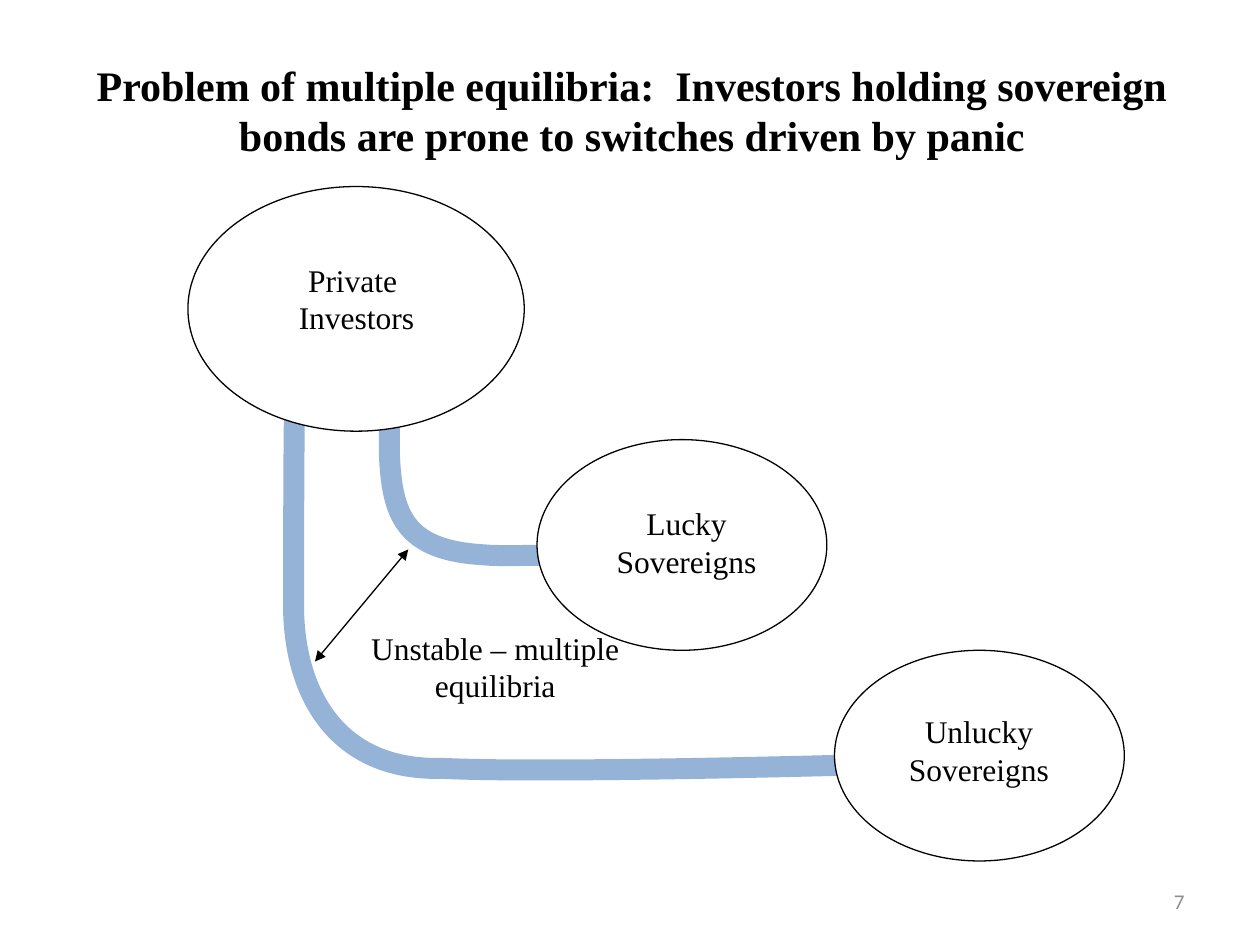
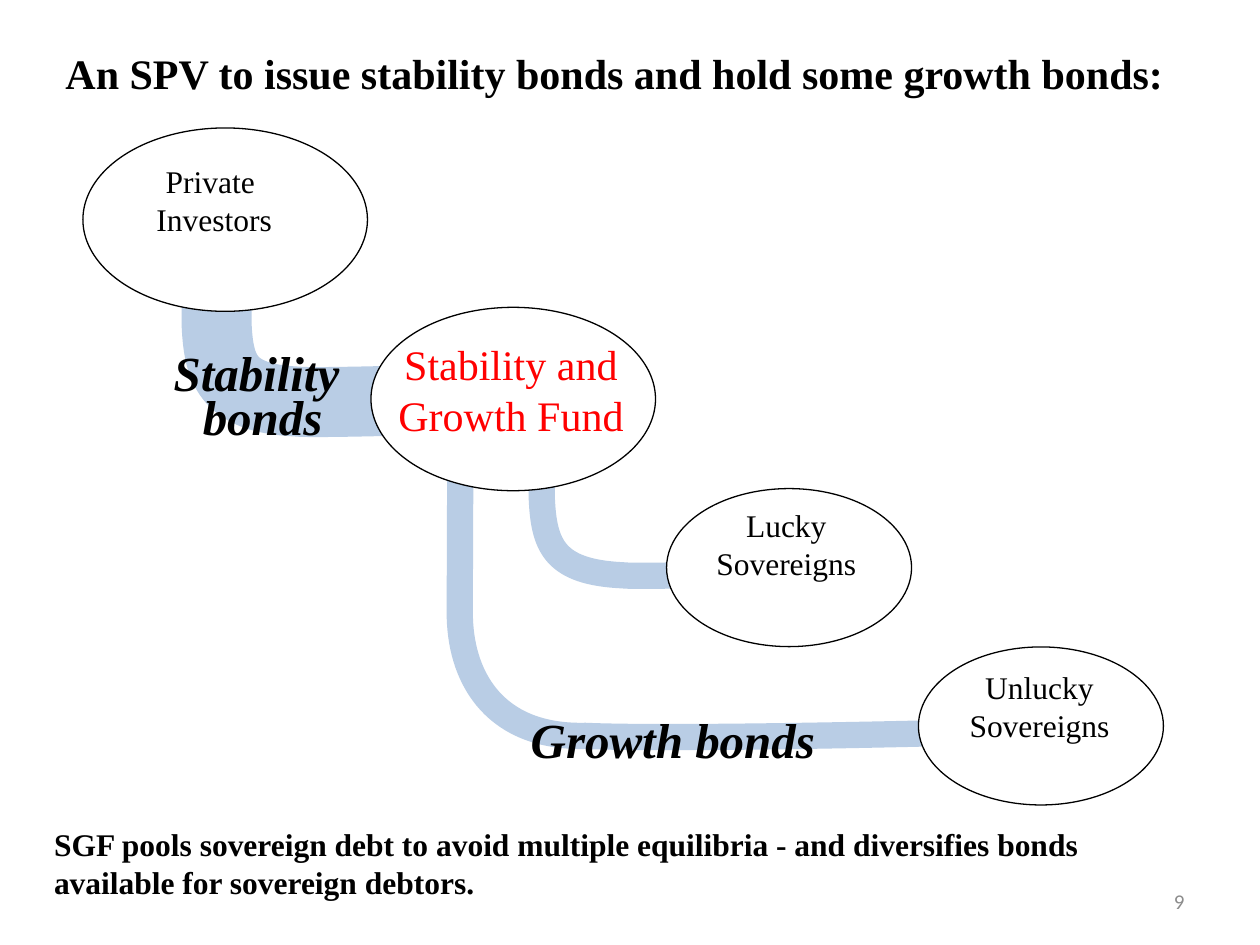
from dataclasses import dataclass
from typing import NamedTuple

from lxml import etree
from pptx import Presentation
from pptx.dml.color import RGBColor
from pptx.enum.shapes import MSO_CONNECTOR, MSO_SHAPE
from pptx.enum.text import MSO_ANCHOR, MSO_AUTO_SIZE, PP_ALIGN
from pptx.oxml.ns import qn
from pptx.slide import Slide
from pptx.text.text import TextFrame
from pptx.util import Pt

LEFT, MID, RIGHT = PP_ALIGN.LEFT, PP_ALIGN.CENTER, PP_ALIGN.RIGHT
TOP, CENTRE = MSO_ANCHOR.TOP, MSO_ANCHOR.MIDDLE
OVAL, STRAIGHT = MSO_SHAPE.OVAL, MSO_CONNECTOR.STRAIGHT
FIXED = MSO_AUTO_SIZE.NONE
TITLE_ONLY = 5


@dataclass(frozen=True)
class Theme:
    serif: str = "Times New Roman"
    sans: str = "Calibri"
    ink: RGBColor = RGBColor(0, 0, 0)
    paper: RGBColor = RGBColor(255, 255, 255)
    grey: RGBColor = RGBColor(0x8C, 0x8C, 0x8C)
    red: RGBColor = RGBColor(255, 0, 0)
    blue: RGBColor = RGBColor(0x95, 0xB3, 0xD7)
    pale: RGBColor = RGBColor(0xB9, 0xCD, 0xE5)
    small: float = 12
    text: float = 18
    head: float = 24
    bond: float = 28
    thin: float = 0.75


THEME = Theme()


class Box(NamedTuple):
    x: float
    y: float
    w: float
    h: float


class Style(NamedTuple):
    size: float = THEME.text
    color: RGBColor = THEME.ink
    bold: bool = False
    slant: bool = False
    align: PP_ALIGN = MID
    face: str = THEME.serif
    lead: float | None = None


class Label(NamedTuple):
    text: str
    box: Box
    style: Style = Style()


# Bends run down, then right: a start and three cubic curves, in percent of a box.
LONG = [(0.4, 0), (0, 0), (0, 41.4), (0, 59.2), (0.4, 79.9), (7.6, 99.4),
        (26.2, 98.7), (44.9, 100), (100, 97.8), (99.6, 97.8)]
SHORT = [(1.1, 0), (0, 0), (0, 50), (0, 50.7), (1.1, 80.5), (6.7, 97),
         (42.2, 99), (48.3, 100), (100, 98.3), (99, 98.3)]


class Flow(NamedTuple):
    bend: list[tuple[float, float]]
    box: Box
    width: float
    color: RGBColor


class Arrow(NamedTuple):
    x1: float
    y1: float
    x2: float
    y2: float


class Page(NamedTuple):
    title: Label
    number: str
    flows: list[Flow]
    ovals: list[Box]
    labels: list[Label]
    arrows: list[Arrow]


HEAD = Style(THEME.head, bold=True)
BOND = Style(THEME.bond, bold=True, slant=True)
NUMBER = Style(THEME.small, THEME.grey, align=RIGHT, face=THEME.sans)
CORNER = Box(516.25, 500.4, 167.75, 28.8)

INVESTORS = "Private \vInvestors"
LUCKY = "Lucky\vSovereigns"
UNLUCKY = "Unlucky\vSovereigns"

PAGES = [
    Page(
        Label("Problem of multiple equilibria:  Investors holding sovereign bonds "
              "are prone to switches driven by panic", Box(44, 30.2, 634.3, 65.4), HEAD),
        "7",
        [Flow(LONG, Box(167.8, 216, 324, 226), 12, THEME.blue),
         Flow(SHORT, Box(222.5, 197.3, 129.6, 121), 12, THEME.blue)],
        [Box(107.4, 106.6, 192.2, 139.8),
         Box(306.9, 251.2, 165.6, 120.4),
         Box(476.9, 371.6, 165.6, 120.4)],
        [Label(INVESTORS, Box(129.6, 145.4, 148.3, 71.3)),
         Label(LUCKY, Box(318.2, 284.4, 148.3, 57.6)),
         Label(UNLUCKY, Box(485.3, 403.2, 148.3, 74.9)),
         Label("Unstable – multiple equilibria", Box(188, 355.7, 190, 48.2))],
        [Arrow(233.3, 314, 180, 378)],
    ),
    Page(
        Label("An SPV to issue stability bonds and hold some growth bonds:",
              Box(30.2, 23.8, 671.8, 36), HEAD._replace(align=LEFT)),
        "9",
        [Flow(SHORT, Box(123.8, 139.7, 109.4, 90.7), 40, THEME.pale),
         Flow(LONG, Box(262.8, 252.7, 273.6, 170), 15, THEME.pale),
         Flow(SHORT, Box(309.6, 239, 109.4, 90.7), 15, THEME.pale)],
        [Box(47.4, 73.1, 162.6, 104.8),
         Box(212, 175.6, 162.6, 104.8),
         Box(380.9, 279.2, 140, 90.3),
         Box(524.8, 369.7, 140, 90.3)],
        [Label("Stability and Growth Fund", Box(198, 190, 187.9, 77.8),
               Style(THEME.head, THEME.red)),
         Label(LUCKY, Box(376.6, 285.8, 145.4, 77.8)),
         Label(UNLUCKY, Box(521.3, 378, 145.4, 77.8)),
         Label("Growth bonds", Box(294.5, 401.8, 180, 41.8), BOND),
         Label(INVESTORS, Box(49.7, 89.3, 145.4, 77.8)),
         Label("Stability \vbonds", Box(84.2, 200.9, 131.8, 59.8), BOND._replace(lead=25)),
         Label("SGF pools sovereign debt to avoid multiple equilibria - and diversifies "
               "bonds available for sovereign debtors.", Box(23.8, 468, 612, 51.1),
               Style(bold=True, align=LEFT))],
        [],
    ),
]


def points(box: Box) -> list[Pt]:
    return [Pt(side) for side in box]


def write(frame: TextFrame, label: Label, anchor: MSO_ANCHOR = TOP) -> None:
    frame.text = label.text
    frame.word_wrap = True
    frame.auto_size = FIXED
    frame.vertical_anchor = anchor
    style = label.style
    para = frame.paragraphs[0]
    para.alignment = style.align
    if style.lead:
        para.line_spacing = Pt(style.lead)
    font = para.font
    font.name, font.size = style.face, Pt(style.size)
    font.bold, font.italic = style.bold, style.slant
    font.color.rgb = style.color


def add_title(slide: Slide, label: Label) -> None:
    title = slide.shapes.title
    title.left, title.top, title.width, title.height = points(label.box)
    write(title.text_frame, label)


def add_label(slide: Slide, label: Label, anchor: MSO_ANCHOR = TOP) -> None:
    write(slide.shapes.add_textbox(*points(label.box)).text_frame, label, anchor)


def add_flow(slide: Slide, flow: Flow) -> None:
    """Draw a bend, turning each three line segments into one cubic curve."""
    box = flow.box
    dots = [(Pt(box.x + box.w * x / 100), Pt(box.y + box.h * y / 100))
            for x, y in flow.bend]
    pen = slide.shapes.build_freeform(*dots[0])
    pen.add_line_segments(dots[1:], close=False)
    shape = pen.convert_to_shape()
    lines = list(shape._element.iter(qn("a:lnTo")))
    trace = lines[0].getparent()
    for start in range(0, len(lines), 3):
        curve = etree.SubElement(trace, qn("a:cubicBezTo"))
        for line in lines[start:start + 3]:
            curve.append(line[0])
            trace.remove(line)
    shape.shadow.inherit = False
    shape.fill.background()
    shape.line.color.rgb = flow.color
    shape.line.width = Pt(flow.width)


def add_oval(slide: Slide, box: Box) -> None:
    oval = slide.shapes.add_shape(OVAL, *points(box))
    oval.shadow.inherit = False
    oval.fill.solid()
    oval.fill.fore_color.rgb = THEME.paper
    oval.line.color.rgb = THEME.ink
    oval.line.width = Pt(THEME.thin)


def add_arrow(slide: Slide, arrow: Arrow) -> None:
    link = slide.shapes.add_connector(STRAIGHT, *(Pt(end) for end in arrow))
    link.line.color.rgb = THEME.ink
    link.line.width = Pt(THEME.thin)
    line = link.line._get_or_add_ln()
    for tip in ("a:headEnd", "a:tailEnd"):
        etree.SubElement(line, qn(tip), type="triangle")
    etree.SubElement(link._element.spPr, qn("a:effectLst"))


def add_page(deck: Presentation, page: Page) -> None:
    slide = deck.slides.add_slide(deck.slide_layouts[TITLE_ONLY])
    add_title(slide, page.title)
    for flow in page.flows:
        add_flow(slide, flow)
    for oval in page.ovals:
        add_oval(slide, oval)
    for label in page.labels:
        add_label(slide, label)
    for arrow in page.arrows:
        add_arrow(slide, arrow)
    add_label(slide, Label(page.number, CORNER, NUMBER), CENTRE)


def main() -> None:
    deck = Presentation()
    deck.slide_width, deck.slide_height = Pt(720), Pt(540)
    for page in PAGES:
        add_page(deck, page)
    deck.save("out.pptx")


if __name__ == "__main__":
    main()
